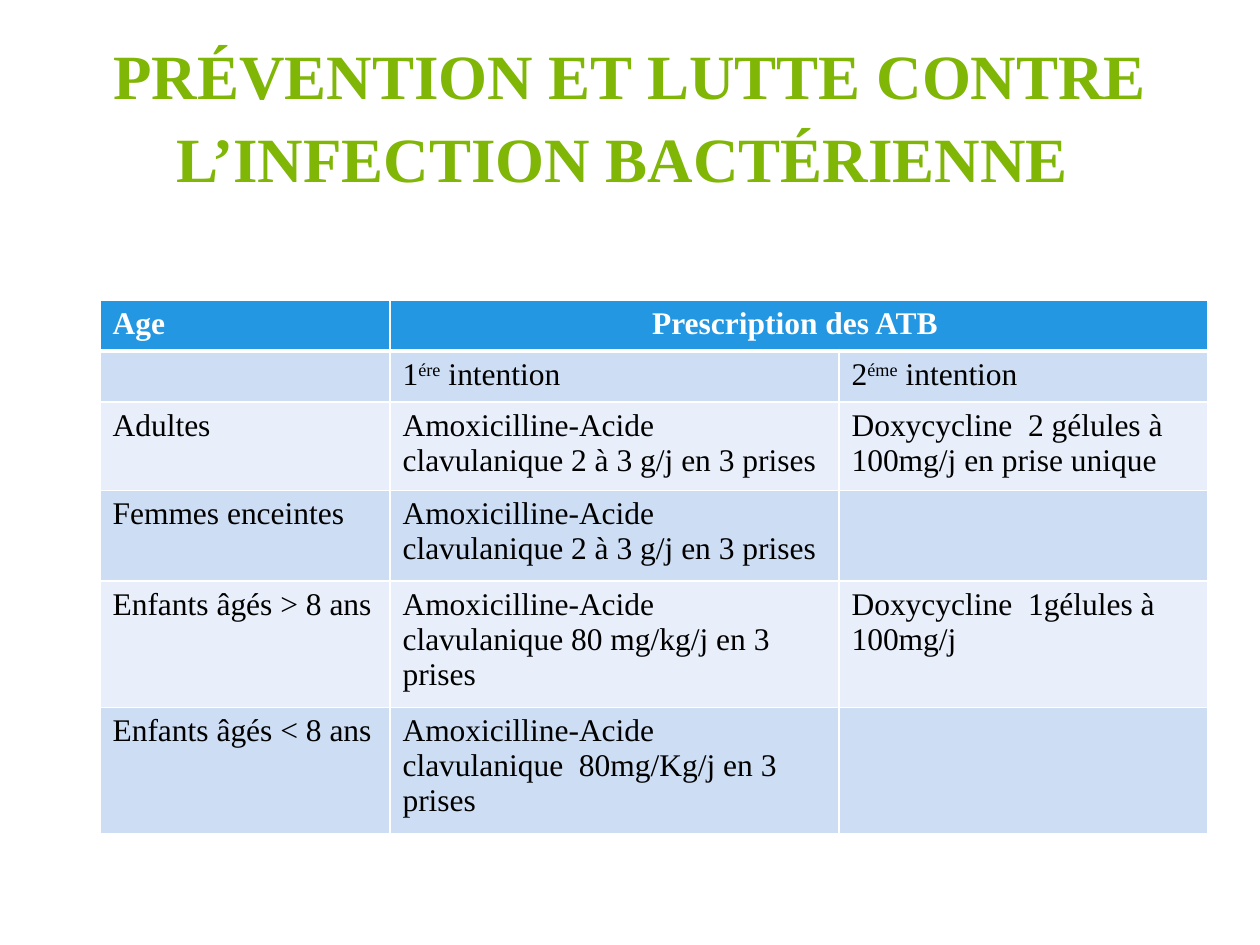
from lxml.etree import SubElement
from pptx import Presentation
from pptx.dml.color import RGBColor
from pptx.enum.text import MSO_ANCHOR as Anchor, PP_ALIGN as Align
from pptx.oxml.ns import qn
from pptx.util import Pt

PX = 914400 // 126
FONT = "Times New Roman"
WHITE = "FFFFFF"


def set_font(paragraph, size, color, bold):
    font = paragraph.font
    font.name, font.size, font.bold = FONT, Pt(size), bold
    font.color.rgb = RGBColor.from_string(color)


def add_border(cell, side, points):
    line = SubElement(cell._tc.get_or_add_tcPr(), qn(f"a:ln{side}"), w=str(Pt(points)))
    fill = SubElement(line, qn("a:solidFill"))
    SubElement(fill, qn("a:srgbClr"), val=WHITE)


presentation = Presentation()
presentation.slide_width = 1260 * PX
presentation.slide_height = 945 * PX
slide = presentation.slides.add_slide(presentation.slide_layouts[6])

title = slide.shapes.add_textbox(76 * PX, 15 * PX, 1108 * PX, 184 * PX)
frame = title.text_frame
frame.word_wrap = True
frame.vertical_anchor = Anchor.BOTTOM
frame.margin_bottom = 4 * PX
paragraph = frame.paragraphs[0]
paragraph.text = "PRÉVENTION ET LUTTE CONTRE L’INFECTION BACTÉRIENNE "
paragraph.alignment = Align.CENTER
paragraph.line_spacing = 1.1
set_font(paragraph, 36, "80B606", True)

rows = [
    ("Age", "Prescription des ATB ", ""),
    ("", "1^ére^ intention", "2^éme^ intention"),
    ("Adultes", "Amoxicilline-Acide  clavulanique 2 à 3 g/j en 3 prises",
     "Doxycycline  2 gélules à 100mg/j en prise unique"),
    ("Femmes enceintes", "Amoxicilline-Acide  clavulanique 2 à 3 g/j en 3 prises", ""),
    ("Enfants âgés > 8 ans", "Amoxicilline-Acide  clavulanique 80 mg/kg/j en 3 prises",
     "Doxycycline  1gélules à 100mg/j"),
    ("Enfants âgés < 8 ans", "Amoxicilline-Acide  clavulanique  80mg/Kg/j en 3 prises", ""),
]
column_widths = [290, 449, 369]
row_heights = [51, 51, 83, 91, 118, 117]

table = slide.shapes.add_table(
    len(rows), len(column_widths), 100 * PX, 300 * PX,
    sum(column_widths) * PX, sum(row_heights) * PX).table
for column, width in zip(table.columns, column_widths):
    column.width = width * PX
for row, height in zip(table.rows, row_heights):
    row.height = height * PX

for row_index, texts in enumerate(rows):
    header = row_index == 0
    background = "2397E2" if header else ("E8EFFA", "CDDDF4")[row_index % 2]
    for column_index, text in enumerate(texts):
        cell = table.cell(row_index, column_index)
        for side in "LRTB":
            thick = (header and side == "B") or (row_index == 1 and side == "T")
            add_border(cell, side, 3 if thick else 1)
        cell.fill.solid()
        cell.fill.fore_color.rgb = RGBColor.from_string(background)
        paragraph = cell.text_frame.paragraphs[0]
        set_font(paragraph, 18, WHITE if header else "000000", header)
        if text:
            for part_index, part in enumerate(text.split("^")):
                run = paragraph.add_run()
                run.text = part
                if part_index == 1:
                    run._r.get_or_add_rPr().set("baseline", "30000")

table.cell(0, 1).merge(table.cell(0, 2))
table.cell(0, 1).text_frame.paragraphs[0].alignment = Align.CENTER

presentation.save("out.pptx")
